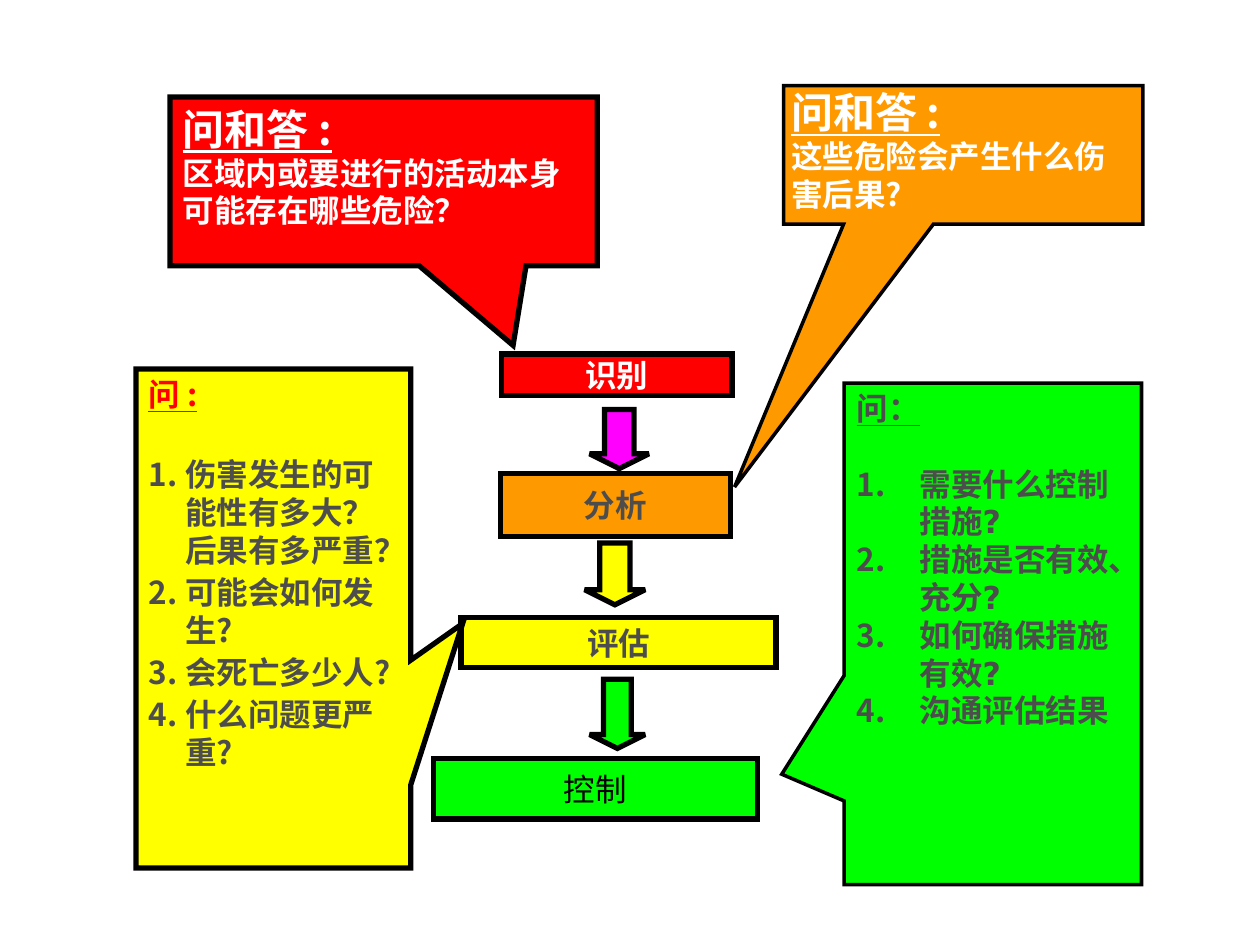
from dataclasses import dataclass
from typing import Optional

from lxml.etree import SubElement
from pptx import Presentation
from pptx.dml.color import RGBColor
from pptx.enum.shapes import MSO_SHAPE
from pptx.enum.text import MSO_ANCHOR, PP_ALIGN
from pptx.oxml.ns import qn
from pptx.util import Pt

PX = 9144  # EMU per px, 100 px to the inch


@dataclass(frozen=True)
class Theme:
    red: str = "FF0000"
    orange: str = "FF9900"
    yellow: str = "FFFF00"
    green: str = "00FF00"
    pink: str = "FF00FF"
    white: str = "FFFFFF"
    gray: str = "4D4D4D"
    black: str = "000000"
    head: int = 24
    body: int = 18
    font: str = "Noto Sans CJK SC"
    wide: str = "DejaVu Sans"
    plain: str = "Arial"


T = Theme()


@dataclass(frozen=True)
class Para:
    text: str
    color: str = T.gray
    size: int = T.body
    font: str = T.font
    bold: bool = True
    under: bool = False
    hang: int = 0  # px of hanging indent, numbered when set
    before: float = 0
    after: float = 0


@dataclass(frozen=True)
class Box:
    at: tuple[int, int, int, int]
    fill: str
    label: Para


@dataclass(frozen=True)
class Arrow:
    at: tuple[int, int, int, int]
    fill: str


@dataclass(frozen=True)
class Callout:
    at: tuple[int, int, int, int]
    fill: str
    tip: tuple[float, float]
    paras: list[Para]
    line: int = 3
    inset: Optional[tuple[int, int]] = None


def add_form(slide, kind: MSO_SHAPE, at: tuple, fill: str, line: int = 3):
    """Add a filled shape with a sharp black outline."""
    form = slide.shapes.add_shape(kind, *(n * PX for n in at))
    form.shadow.inherit = False
    form.fill.solid()
    form.fill.fore_color.rgb = RGBColor.from_string(fill)
    form.line.color.rgb = RGBColor.from_string(T.black)
    form.line.width = Pt(line)
    edge = form._element.spPr.find(qn("a:ln"))
    SubElement(edge, qn("a:miter"), lim="800000")
    return form


def write(frame, paras: list[Para], align: PP_ALIGN) -> None:
    for i, item in enumerate(paras):
        para = frame.paragraphs[0] if i == 0 else frame.add_paragraph()
        para.text = item.text
        para.alignment = align
        para.space_before = Pt(item.before)
        para.space_after = Pt(item.after)
        props = para._p.get_or_add_pPr()
        if item.hang:
            props.set("marL", str(item.hang * PX))
            props.set("indent", str(-item.hang * PX))
            SubElement(props, qn("a:buFont"), typeface=item.font)
            SubElement(props, qn("a:buAutoNum"), type="arabicPeriod")
        font = para.font
        font.name = item.font
        font.size = Pt(item.size)
        font.bold = item.bold
        font.underline = item.under
        font.color.rgb = RGBColor.from_string(item.color)
        SubElement(props.find(qn("a:defRPr")), qn("a:ea"), typeface=T.font)


def draw_box(slide, box: Box) -> None:
    form = add_form(slide, MSO_SHAPE.FLOWCHART_PROCESS, box.at, box.fill)
    frame = form.text_frame
    frame.word_wrap = False
    frame.vertical_anchor = MSO_ANCHOR.MIDDLE
    write(frame, [box.label], PP_ALIGN.CENTER)


def draw_arrow(slide, arrow: Arrow) -> None:
    form = add_form(slide, MSO_SHAPE.DOWN_ARROW, arrow.at, arrow.fill)
    form.adjustments[0] = 0.5
    form.adjustments[1] = 0.25


def draw_callout(slide, call: Callout) -> None:
    form = add_form(slide, MSO_SHAPE.RECTANGULAR_CALLOUT, call.at, call.fill, call.line)
    for i, value in enumerate(call.tip):
        form.adjustments[i] = value
    frame = form.text_frame
    frame.word_wrap = True
    frame.vertical_anchor = MSO_ANCHOR.TOP
    if call.inset:
        side, edge = (n * PX for n in call.inset)
        frame.margin_left = frame.margin_right = side
        frame.margin_top = frame.margin_bottom = edge
    write(frame, call.paras, PP_ALIGN.LEFT)


def answer(text: str) -> list[Para]:
    return [Para("问和答 :", T.white, T.head, under=True), Para(text, T.white)]


def number(items: list[str], hang: int, font: str, before: float = 0) -> list[Para]:
    return [Para(text, font=font, hang=hang, before=before) for text in items]


RISKS = ["伤害发生的可能性有多大？后果有多严重？", "可能会如何发生?", "会死亡多少人?", "什么问题更严重?"]
STEPS = ["需要什么控制措施?", "措施是否有效、充分?", "如何确保措施有效?", "沟通评估结果"]

# Back to front
PARTS = [
    # Identify
    Callout((135, 77, 339, 134), T.red, (0.303, 0.971),
            answer("区域内或要进行的活动本身可能存在哪些危险？")),
    Box((398, 281, 183, 33), T.red, Para("识别", T.white)),
    # Assess
    Box((366, 490, 250, 40), T.yellow, Para("评估")),
    Arrow((464, 431, 48, 49), T.yellow),
    Callout((108, 293, 218, 396), T.yellow, (0.689, 0.01),
            [Para("问 :", T.red, under=True, after=21.5)]
            + number(RISKS, 29, T.font, 2.5)),
    # Analyse
    Box((397, 376, 183, 50), T.orange, Para("分析")),
    Arrow((468, 325, 47, 47), T.pink),
    Callout((622, 68, 285, 110), T.orange, (-0.637, 2.396),
            answer("这些危险会产生什么伤害后果?"), 2, (6, 1)),
    # Control
    Box((344, 602, 257, 48), T.green,
        Para("控制", T.black, font=T.plain, bold=False)),
    Arrow((468, 539, 44, 55), T.green),
    Callout((670, 304, 236, 398), T.green, (-0.71, 0.28),
            [Para("问：", font=T.wide, under=True, after=21.5)]
            + number(STEPS, 50, T.wide), 2),
]

DRAW = {Box: draw_box, Arrow: draw_arrow, Callout: draw_callout}


def main() -> None:
    deck = Presentation()
    deck.slide_width, deck.slide_height = 1000 * PX, 750 * PX
    slide = deck.slides.add_slide(deck.slide_layouts[6])
    for part in PARTS:
        DRAW[type(part)](slide, part)
    deck.save("out.pptx")


if __name__ == "__main__":
    main()
